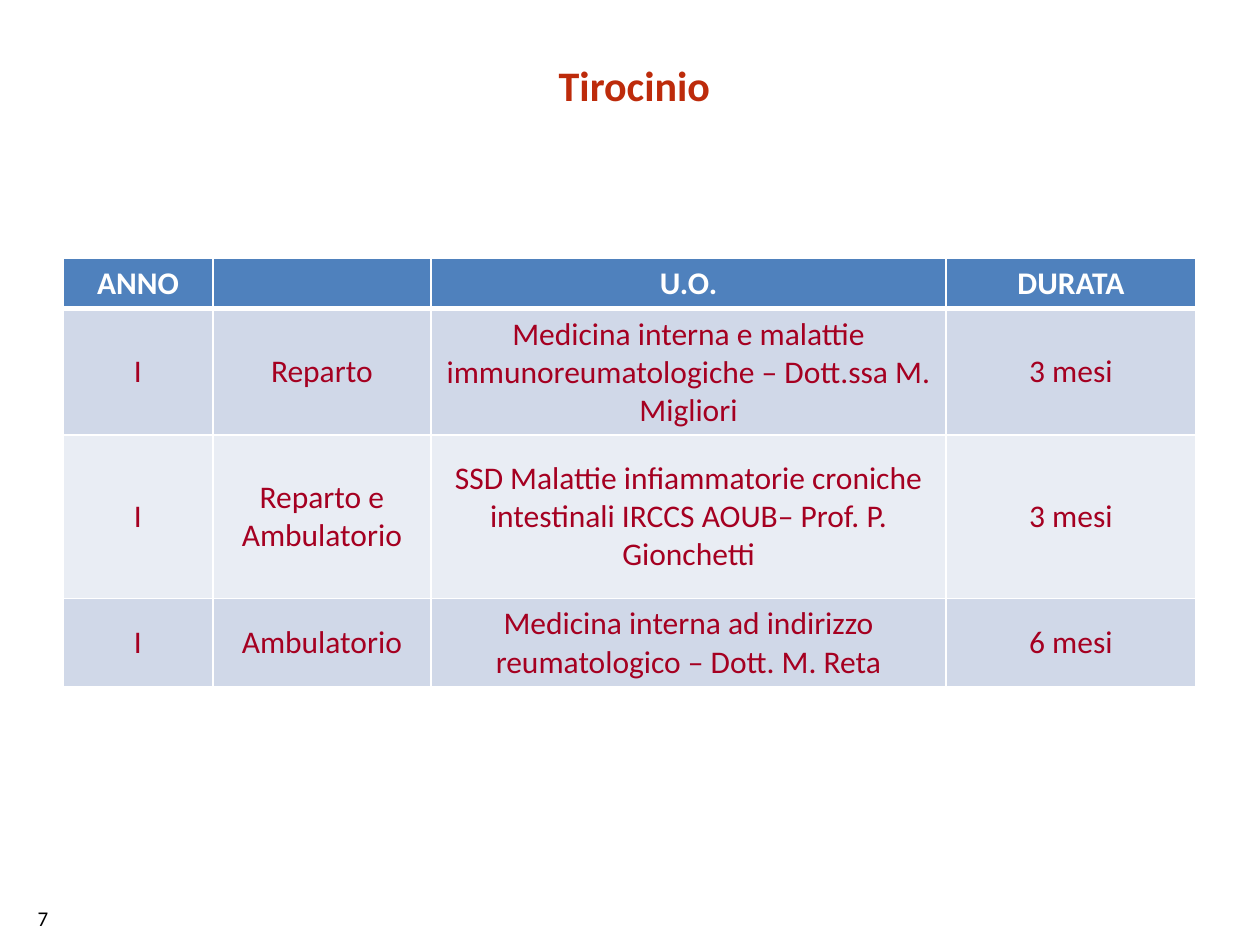
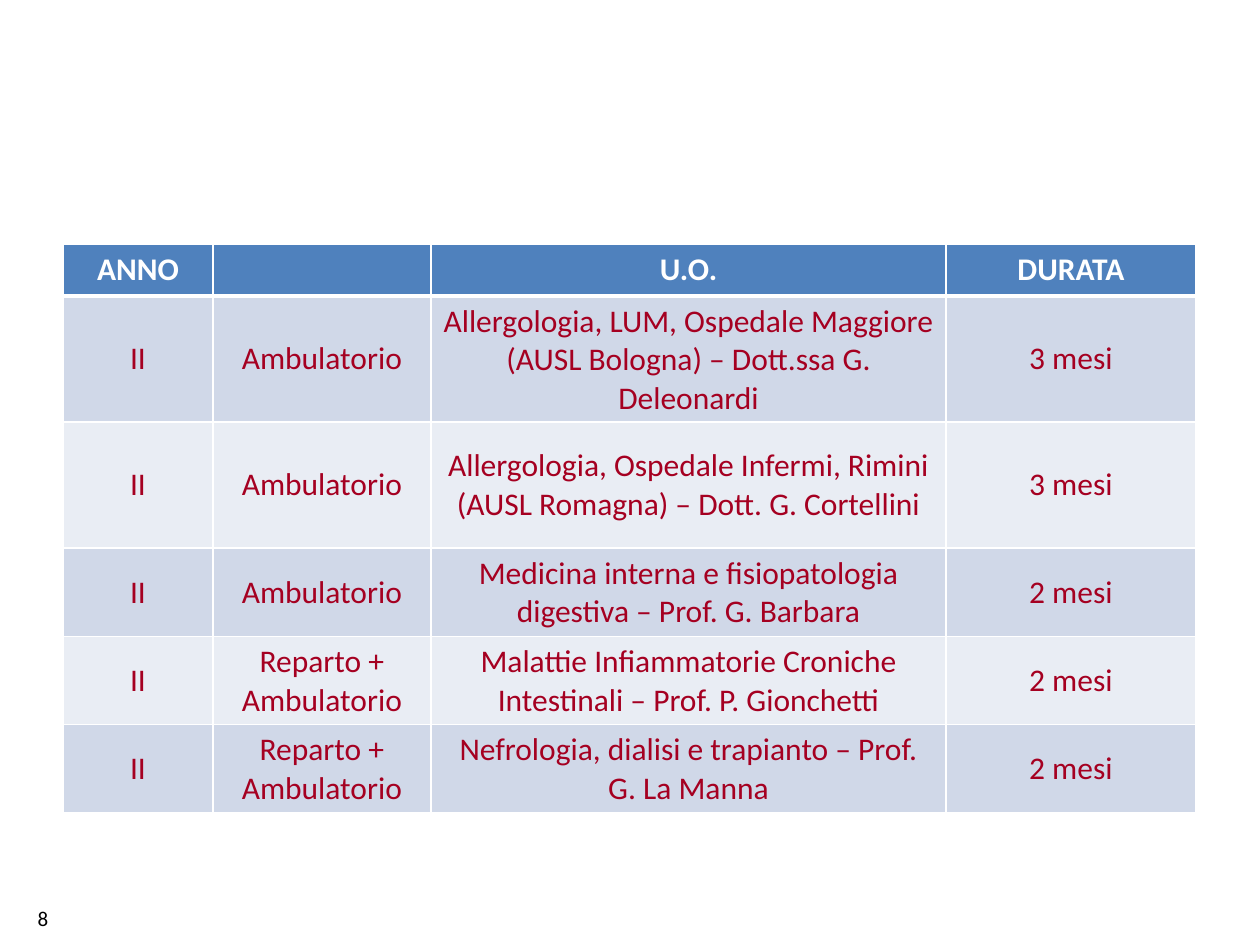
from lxml import etree
from pptx import Presentation
from pptx.dml.color import RGBColor
from pptx.enum.text import MSO_ANCHOR, PP_ALIGN
from pptx.oxml.ns import qn
from pptx.util import Inches, Pt

CENTER, LEFT = PP_ALIGN.CENTER, PP_ALIGN.LEFT
TOP, MIDDLE = MSO_ANCHOR.TOP, MSO_ANCHOR.MIDDLE

FONT = "Calibri"
WHITE, BLACK = "FFFFFF", "000000"
TITLE_RED, TEXT_RED = "BD2B0B", "A50021"
HEADER_BLUE = "4F81BD"
BANDS = ["D0D8E8", "E9EDF4"]

HEADER = ["ANNO", "", "U.O.", "DURATA"]
COL_WIDTHS = [1.19, 1.73, 4.09, 1.98]

FIRST_YEAR = [
    ["I", "Reparto",
     "Medicina interna e malattie immunoreumatologiche – Dott.ssa M. Migliori", "3 mesi"],
    ["I", "Reparto e Ambulatorio",
     "SSD Malattie infiammatorie croniche intestinali IRCCS AOUB– Prof. P. Gionchetti", "3 mesi"],
    ["I", "Ambulatorio",
     "Medicina interna ad indirizzo reumatologico – Dott. M. Reta", "6 mesi"],
]
SECOND_YEAR = [
    ["II", "Ambulatorio",
     "Allergologia, LUM, Ospedale Maggiore (AUSL Bologna) – Dott.ssa G. Deleonardi", "3 mesi"],
    ["II", "Ambulatorio",
     "Allergologia, Ospedale Infermi, Rimini (AUSL Romagna) – Dott. G. Cortellini", "3 mesi"],
    ["II", "Ambulatorio",
     "Medicina interna e fisiopatologia digestiva – Prof. G. Barbara", "2 mesi"],
    ["II", "Reparto + Ambulatorio",
     "Malattie Infiammatorie Croniche Intestinali – Prof. P. Gionchetti", "2 mesi"],
    ["II", "Reparto + Ambulatorio",
     "Nefrologia, dialisi e trapianto – Prof. G. La Manna", "2 mesi"],
]


def rgb(value):
    return RGBColor.from_string(value)


def write(tf, text, size, color, bold=False, align=LEFT):
    tf.text = text
    p = tf.paragraphs[0]
    p.alignment = align
    for r in p.runs:
        r.font.name = FONT
        r.font.size = Pt(size)
        r.font.bold = bold
        r.font.color.rgb = rgb(color)
    return p


def add_text_box(s, box):
    tf = s.shapes.add_textbox(*map(Inches, box)).text_frame
    tf.word_wrap = True
    return tf


def add_title(s, box, text):
    p = write(add_text_box(s, box), text, 24, TITLE_RED, True, CENTER)
    p.line_spacing = Pt(22)


def add_page_number(s, box, number):
    write(add_text_box(s, box), str(number), 12, BLACK)


def set_borders(cell, **widths):
    """Draw white cell borders; the keys are L, R, T and B, in points."""
    tc_pr = cell._tc.get_or_add_tcPr()
    for side in "LRTB":
        ln = etree.SubElement(tc_pr, qn(f"a:ln{side}"), w=str(Pt(widths.get(side, 1))))
        fill = etree.SubElement(ln, qn("a:solidFill"))
        etree.SubElement(fill, qn("a:srgbClr"), val=WHITE)


def style_cell(cell, text, row):
    header = row == 0
    if header:
        set_borders(cell, B=3)
    else:
        set_borders(cell, T=3 if row == 1 else 1)
    cell.fill.solid()
    cell.fill.fore_color.rgb = rgb(HEADER_BLUE if header else BANDS[(row - 1) % 2])
    cell.vertical_anchor = TOP if header else MIDDLE
    write(cell.text_frame, text, 18, WHITE if header else TEXT_RED, header, CENTER)


def add_rotation_table(s, left, top, row_heights, rows):
    rows = [HEADER] + rows
    table = s.shapes.add_table(
        len(rows), len(HEADER), Inches(left), Inches(top),
        Inches(sum(COL_WIDTHS)), Inches(sum(row_heights))).table
    for col, width in zip(table.columns, COL_WIDTHS):
        col.width = Inches(width)
    for i, (height, texts) in enumerate(zip(row_heights, rows)):
        table.rows[i].height = Inches(height)
        for j, text in enumerate(texts):
            style_cell(table.cell(i, j), text, i)


def add_slide(prs, number, table_top, row_heights, rows, title=None):
    s = prs.slides.add_slide(prs.slide_layouts[6])
    add_page_number(s, (0.2, 7.14, 0.87, 0.3), number)
    if title:
        add_title(s, (0.43, 0.52, 9.21, 0.71), title)
    add_rotation_table(s, 0.5, table_top, row_heights, rows)


def main():
    prs = Presentation()
    prs.slide_width, prs.slide_height = Inches(10), Inches(7.5)
    add_slide(prs, 7, 2.05, [0.4, 1, 1.3, 0.7], FIRST_YEAR, "Tirocinio")
    add_slide(prs, 8, 1.94, [0.41, 1, 1, 0.7, 0.7, 0.7], SECOND_YEAR)
    prs.save("out.pptx")


if __name__ == "__main__":
    main()
